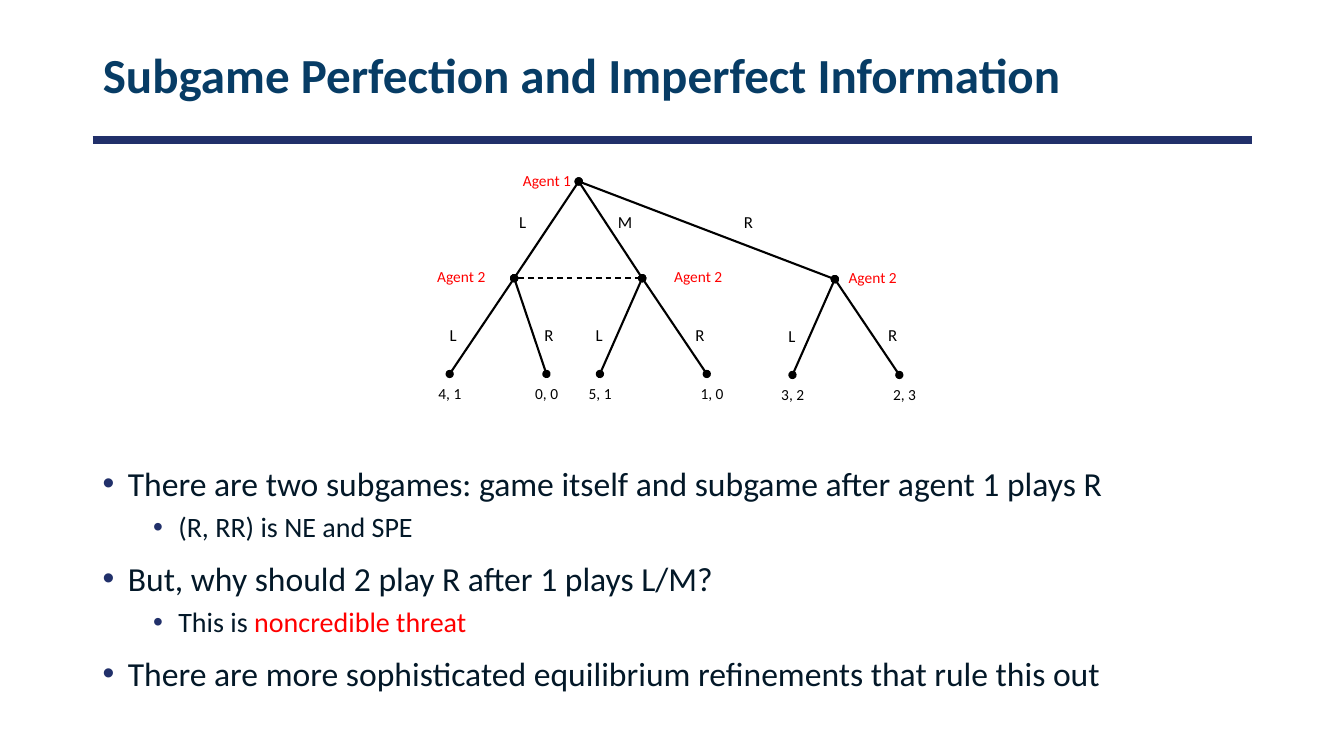
from dataclasses import dataclass

from lxml import etree
from pptx import Presentation
from pptx import util as u
from pptx.dml.color import RGBColor
from pptx.enum import dml, shapes, text
from pptx.oxml import ns

PX = 9144  # 100 px to the inch
FONT = "Calibri"
COLORS = {
    "title": "073C65",
    "rule": "21306A",
    "body": "031828",
    "accent": "FF0000",
    "tree": "000000",
}
MOVE_WIDTHS = {"L": 28, "M": 35, "R": 30}
BULLET_INDENT = 25


@dataclass(frozen=True)
class Decision:
    x: int
    y: int
    agent: str
    agent_left: int


@dataclass(frozen=True)
class Outcome:
    x: int
    y: int
    payoff: str
    payoff_left: int


@dataclass(frozen=True)
class Branch:
    start: Decision
    end: Decision | Outcome
    move: str
    move_left: int
    move_top: int


@dataclass(frozen=True)
class Bullet:
    runs: tuple[tuple[str, str], ...]
    size: int
    indent: int
    space_before: int


ROOT = Decision(574, 180, "Agent 1", 500)
AFTER_L = Decision(510, 276, "Agent 2", 415)
AFTER_M = Decision(637, 276, "Agent 2", 650)
AFTER_R = Decision(828, 277, "Agent 2", 823)
DECISIONS = (ROOT, AFTER_L, AFTER_M, AFTER_R)

BRANCHES = (
    Branch(ROOT, AFTER_L, "L", 505, 205),
    Branch(ROOT, AFTER_M, "M", 603, 205),
    Branch(ROOT, AFTER_R, "R", 728, 205),
    Branch(AFTER_L, Outcome(446, 371, "4, 1", 425), "L", 436, 317),
    Branch(AFTER_L, Outcome(542, 371, "0, 0", 521), "R", 530, 317),
    Branch(AFTER_M, Outcome(595, 371, "5, 1", 574), "L", 581, 317),
    Branch(AFTER_M, Outcome(701, 371, "1, 0", 685), "R", 680, 317),
    Branch(AFTER_R, Outcome(786, 372, "3, 2", 765), "L", 772, 318),
    Branch(AFTER_R, Outcome(892, 372, "2, 3", 876), "R", 871, 317),
)


def point(*runs: tuple[str, str]) -> Bullet:
    return Bullet(runs, size=24, indent=25, space_before=10)


def subpoint(*runs: tuple[str, str]) -> Bullet:
    return Bullet(runs, size=20, indent=75, space_before=5)


BULLETS = (
    point(("There are two subgames: game itself and subgame after agent 1 plays R", "body")),
    subpoint(("(R, RR) is NE and SPE", "body")),
    point(("But, why should 2 play R after 1 plays L/M?", "body")),
    subpoint(("This is ", "body"), ("noncredible threat", "accent")),
    point(("There are more sophisticated equilibrium refinements that rule this out", "body")),
)


def rgb(color: str) -> RGBColor:
    return RGBColor.from_string(COLORS[color])


def add_run(paragraph, words: str, size: int, color: str, bold: bool = False) -> None:
    run = paragraph.add_run()
    run.text = words
    run.font.name = FONT
    run.font.size = u.Pt(size)
    run.font.bold = bold
    run.font.color.rgb = rgb(color)


def add_line(parent, start: tuple[int, int], end: tuple[int, int], color: str, width: float):
    line = parent.add_connector(
        shapes.MSO_CONNECTOR.STRAIGHT, *(v * PX for v in (*start, *end))
    )
    line.line.color.rgb = rgb(color)
    line.line.width = u.Pt(width)
    etree.SubElement(line._element.spPr, ns.qn("a:effectLst"))
    return line


def add_label(parent, words: str, box: tuple[int, int, int, int], size: int, color: str,
              wrap: bool = True, centred: bool = False) -> None:
    frame = parent.add_textbox(*(v * PX for v in box)).text_frame
    frame.word_wrap = wrap
    frame.auto_size = text.MSO_AUTO_SIZE.SHAPE_TO_FIT_TEXT
    paragraph = frame.paragraphs[0]
    if centred:
        frame.vertical_anchor = text.MSO_ANCHOR.MIDDLE
        paragraph.alignment = text.PP_ALIGN.CENTER
    add_run(paragraph, words, size, color)


def add_branch(tree, branch: Branch) -> None:
    """Draw a branch with its dots and move, and the payoff if it ends the game."""
    start, end = branch.start, branch.end
    line = add_line(tree, (start.x, start.y), (end.x, end.y), "tree", 1.5)
    for tag in ("a:headEnd", "a:tailEnd"):
        etree.SubElement(line.line._get_or_add_ln(), ns.qn(tag), type="oval")
    move_box = (branch.move_left, branch.move_top, MOVE_WIDTHS[branch.move], 30)
    add_label(tree, branch.move, move_box, 12, "tree", wrap=False)
    if isinstance(end, Outcome):
        add_label(tree, end.payoff, (end.payoff_left, end.y + 5, 64, 29), 11, "tree")


def add_game_tree(slide) -> None:
    tree = slide.shapes.add_group_shape().shapes
    for branch in BRANCHES:
        add_branch(tree, branch)
    for node in DECISIONS:
        add_label(tree, node.agent, (node.agent_left, node.y - 16, 85, 29), 11,
                  "accent", centred=True)
    information_set = add_line(
        tree, (AFTER_L.x + 4, AFTER_L.y), (AFTER_M.x, AFTER_M.y), "tree", 1
    )
    information_set.line.dash_style = dml.MSO_LINE.DASH


def add_bullet(paragraph, bullet: Bullet) -> None:
    paragraph.space_before = u.Pt(bullet.space_before)
    props = paragraph._p.get_or_add_pPr()
    props.set("marL", str(bullet.indent * PX))
    props.set("indent", str(-BULLET_INDENT * PX))
    bullet_color = etree.SubElement(props, ns.qn("a:buClr"))
    etree.SubElement(bullet_color, ns.qn("a:srgbClr"), val=COLORS["rule"])
    etree.SubElement(props, ns.qn("a:buFont"), typeface="Arial")
    etree.SubElement(props, ns.qn("a:buChar"), char="•")
    for words, color in bullet.runs:
        add_run(paragraph, words, bullet.size, color)


def add_discussion(slide) -> None:
    frame = slide.shapes.add_textbox(*(v * PX for v in (92, 454, 1150, 273))).text_frame
    frame.word_wrap = True
    for index, bullet in enumerate(BULLETS):
        paragraph = frame.add_paragraph() if index else frame.paragraphs[0]
        add_bullet(paragraph, bullet)


def set_title(slide, words: str) -> None:
    title = slide.shapes.title
    title.left, title.top, title.width, title.height = (
        v * PX for v in (92, 23, 1150, 108)
    )
    frame = title.text_frame
    frame.auto_size = text.MSO_AUTO_SIZE.NONE
    frame.vertical_anchor = text.MSO_ANCHOR.MIDDLE
    paragraph = frame.paragraphs[0]
    paragraph.alignment = text.PP_ALIGN.LEFT
    paragraph.line_spacing = 0.9
    add_run(paragraph, words, 35, "title", bold=True)


def main() -> None:
    deck = Presentation()
    deck.slide_width, deck.slide_height = 1333 * PX, 750 * PX
    slide = deck.slides.add_slide(deck.slide_layouts.get_by_name("Title Only"))
    set_title(slide, "Subgame Perfection and Imperfect Information")
    add_line(slide.shapes, (92, 139), (1242, 139), "rule", 6)
    add_game_tree(slide)
    add_discussion(slide)
    deck.save("out.pptx")


if __name__ == "__main__":
    main()
